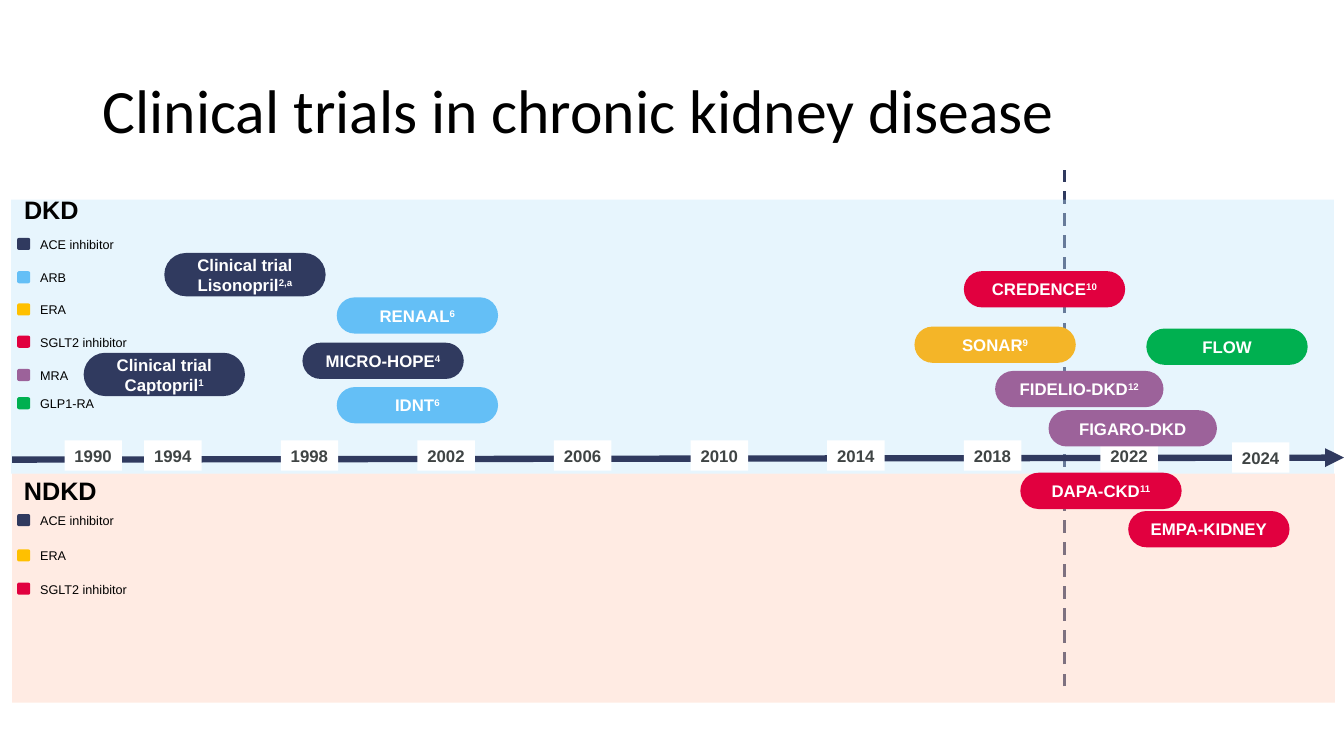
"""Build a timeline slide of clinical trials in chronic kidney disease."""
from lxml import etree
from pptx import Presentation
from pptx.dml.color import RGBColor
from pptx.enum.dml import MSO_LINE
from pptx.enum.shapes import MSO_CONNECTOR, MSO_SHAPE
from pptx.enum.text import MSO_ANCHOR, MSO_AUTO_SIZE, PP_ALIGN
from pptx.oxml.ns import qn
from pptx.util import Inches, Pt

RECTANGLE, ROUNDED = MSO_SHAPE.RECTANGLE, MSO_SHAPE.ROUNDED_RECTANGLE
STRAIGHT, DASH = MSO_CONNECTOR.STRAIGHT, MSO_LINE.DASH
LEFT, CENTER, RIGHT = PP_ALIGN.LEFT, PP_ALIGN.CENTER, PP_ALIGN.RIGHT
MIDDLE, TOP = MSO_ANCHOR.MIDDLE, MSO_ANCHOR.TOP
GROW = MSO_AUTO_SIZE.SHAPE_TO_FIT_TEXT

COLORS = {
    "ACE inhibitor": "303A5F", "ARB": "64BFF6", "ERA": "FFC000",
    "SGLT2 inhibitor": "E1003F", "MRA": "9C629A", "GLP1-RA": "00B050",
    "sonar": "F4B528", "navy": "303A5F", "year": "3F4444",
    "black": "000000", "white": "FFFFFF",
    "DKD band": "C1E5FB", "NDKD band": "FFCBB6",
}

TITLE = "Clinical trials in chronic kidney disease"
BANDS = [("NDKD band", 0.12, 4.7, 2.27), ("DKD band", 0.11, 1.98, 2.72)]
HEADINGS = [("DKD", 1.88, 0.55), ("NDKD", 4.67, 0.73)]
LEGEND = [
    ("ACE inhibitor", 2.3), ("ARB", 2.63), ("ERA", 2.95),
    ("SGLT2 inhibitor", 3.27), ("MRA", 3.6), ("GLP1-RA", 3.88),
    ("ACE inhibitor", 5.04), ("ERA", 5.39), ("SGLT2 inhibitor", 5.72),
]
TRIALS = [
    (["RENAAL"], "6", "ARB", 3.34, 2.95, 1.6),
    (["IDNT"], "6", "ARB", 3.34, 3.84, 1.6),
    (["MICRO-HOPE"], "4", "ACE inhibitor", 3, 3.4, 1.6),
    (["Clinical trial", "Lisonopril"], "2,a", "ACE inhibitor", 1.63, 2.51, 1.6),
    (["Clinical trial", "Captopril"], "1", "ACE inhibitor", 0.83, 3.5, 1.6),
    (["CREDENCE"], "10", "SGLT2 inhibitor", 9.56, 2.69, 1.6),
    (["FIDELIO-DKD"], "12", "MRA", 9.87, 3.68, 1.67),
    (["DAPA-CKD"], "11", "SGLT2 inhibitor", 10.12, 4.69, 1.6),
    (["SONAR"], "9", "sonar", 9.07, 3.24, 1.6),
    (["EMPA-KIDNEY"], "", "SGLT2 inhibitor", 11.19, 5.07, 1.6),
    (["FLOW"], "", "GLP1-RA", 11.37, 3.26, 1.6),
    (["FIGARO-DKD"], "", "MRA", 10.4, 4.07, 1.67),
]
FIRST_YEAR_LEFT, YEAR_STEP = 1.43, 1.355
YEARS = [("1990", 0.64, 4.37), ("2024", 12.22, 4.39)] + [
    (str(1994 + 4 * step), FIRST_YEAR_LEFT + YEAR_STEP * step, 4.37)
    for step in range(8)
]


def color(name):
    return RGBColor.from_string(COLORS[name])


def add_box(slide, kind, left, top, width, height, fill):
    shape = slide.shapes.add_shape(
        kind, Inches(left), Inches(top), Inches(width), Inches(height))
    shape.shadow.inherit = False
    shape.fill.solid()
    shape.fill.fore_color.rgb = color(fill)
    shape.line.fill.background()
    return shape


def add_textbox(slide, left, top, width, height):
    return slide.shapes.add_textbox(
        Inches(left), Inches(top), Inches(width), Inches(height))


def write(shape, lines, size, ink, bold=False, align=LEFT, anchor=MIDDLE,
          wrap=True, superscript=""):
    frame = shape.text_frame
    frame.word_wrap = wrap
    frame.vertical_anchor = anchor
    paragraph = frame.paragraphs[0]
    paragraph.alignment = align
    for index, line in enumerate(lines):
        if index:
            paragraph.add_line_break()
        paragraph.add_run().text = line
    if superscript:
        run = paragraph.add_run()
        run.text = superscript
        run._r.get_or_add_rPr().set("baseline", "30000")
    font = paragraph.font
    font.name, font.size, font.bold = "Arial", Pt(size), bold
    font.color.rgb = color(ink)
    return frame


def add_line(slide, start, end, width):
    line = slide.shapes.add_connector(
        STRAIGHT, *(Inches(value) for value in start + end))
    line.line.color.rgb = color("navy")
    line.line.width = Pt(width)
    etree.SubElement(line._element.spPr, qn("a:effectLst"))
    return line


def add_title(slide):
    title = slide.shapes.title
    title.left, title.top = Inches(0.92), Inches(0.4)
    title.width, title.height = Inches(11.5), Inches(1.45)
    title.text_frame.text = TITLE
    title.text_frame.vertical_anchor = MIDDLE
    paragraph = title.text_frame.paragraphs[0]
    paragraph.alignment = LEFT
    paragraph.line_spacing = 0.9
    paragraph.font.name, paragraph.font.size = "Calibri", Pt(44)
    paragraph.font.color.rgb = color("black")


def add_background(slide):
    divider = add_line(slide, (10.56, 6.81), (10.56, 1.69), 2.25)
    divider.line.dash_style = DASH
    for name, left, top, height in BANDS:
        band = add_box(slide, RECTANGLE, left, top, 13.12, height, name)
        fill = band._element.spPr.find(qn("a:solidFill"))
        etree.SubElement(fill[0], qn("a:alpha"), val="38000")


def add_timeline(slide):
    axis = add_line(slide, (0.12, 4.56), (13.33, 4.54), 4.5)
    etree.SubElement(axis.line._get_or_add_ln(), qn("a:tailEnd"), type="triangle")
    for year, left, top in YEARS:
        label = add_box(slide, RECTANGLE, left, top, 0.57, 0.3, "white")
        write(label, [year], 12, "year", bold=True, wrap=False).auto_size = GROW


def add_legend(slide):
    for text, top, width in HEADINGS:
        heading = add_textbox(slide, 0.23, top, width, 0.4)
        frame = write(heading, [text], 18, "black", bold=True, align=RIGHT, wrap=False)
        frame.margin_left = frame.margin_right = 0
        frame.auto_size = GROW
    for drug, top in LEGEND:
        add_box(slide, ROUNDED, 0.17, top + 0.06, 0.13, 0.12, drug)
        label = add_textbox(slide, 0.3, top, 1.28, 0.25)
        write(label, [drug], 9, "black", anchor=TOP).auto_size = GROW


def add_trials(slide):
    for lines, reference, fill, left, top, width in TRIALS:
        height = 0.43 if len(lines) > 1 else 0.36
        pill = add_box(slide, ROUNDED, left, top, width, height, fill)
        pill.adjustments[0] = 0.5
        write(pill, lines, 12, "white", bold=True, align=CENTER, superscript=reference)


def main():
    presentation = Presentation()
    presentation.slide_width, presentation.slide_height = Inches(13.33), Inches(7.5)
    slide = presentation.slides.add_slide(presentation.slide_layouts[5])
    add_title(slide)
    add_background(slide)
    add_timeline(slide)
    add_legend(slide)
    add_trials(slide)
    presentation.save("out.pptx")


if __name__ == "__main__":
    main()
